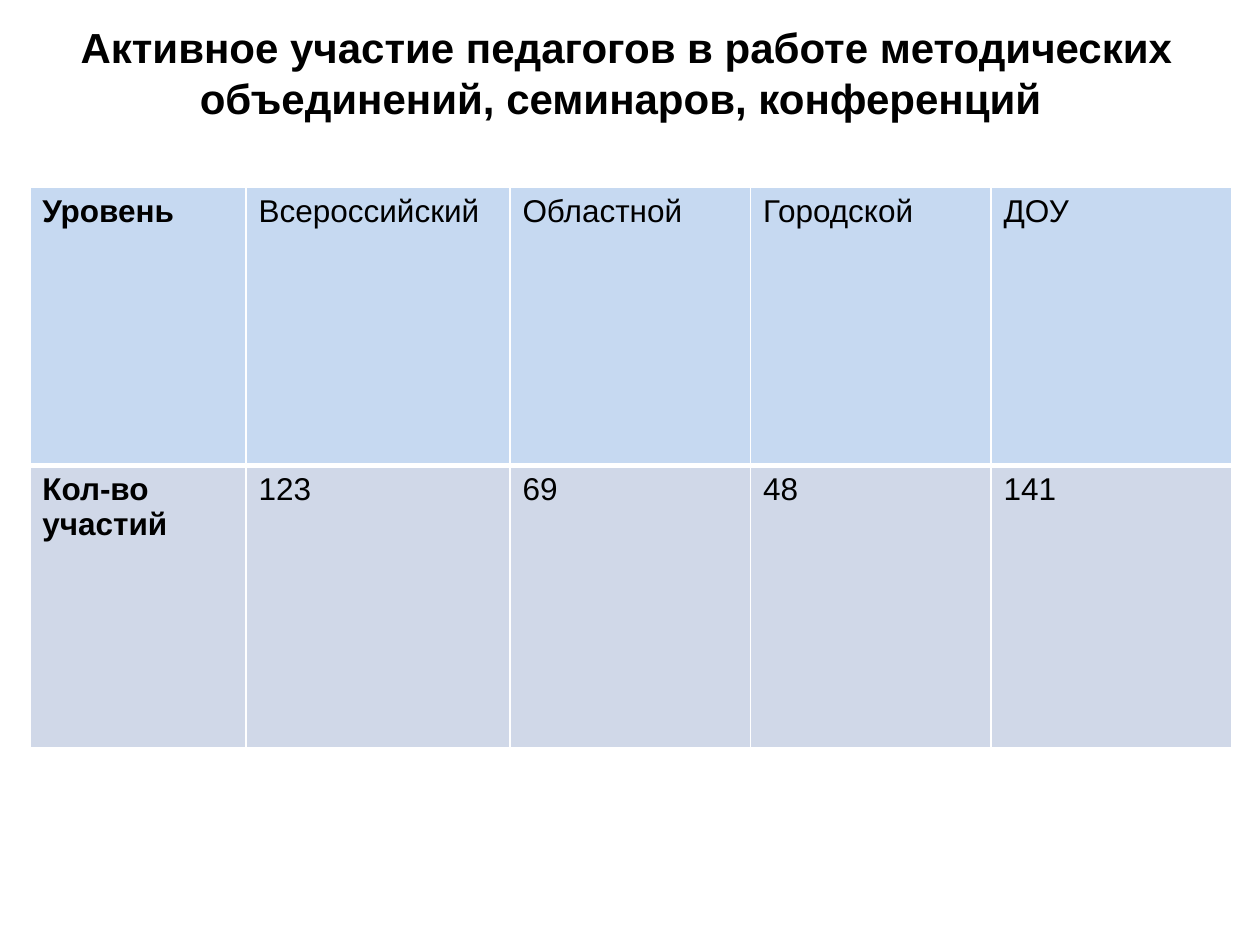
from lxml.etree import SubElement
from pptx import Presentation
from pptx.dml.color import RGBColor
from pptx.enum.text import MSO_ANCHOR, PP_ALIGN
from pptx.oxml.ns import qn
from pptx.util import Cm, Pt

BLACK = RGBColor(0x00, 0x00, 0x00)
WHITE = RGBColor(0xFF, 0xFF, 0xFF)
HEADER_BLUE = RGBColor(0xC6, 0xD9, 0xF1)
BODY_BLUE = RGBColor(0xD0, 0xD8, 0xE8)

LEVELS = ["Уровень", "Всероссийский", "Областной", "Городской", "ДОУ"]
COUNTS = ["Кол-во участий", "123", "69", "48", "141"]
COLUMN_WIDTHS = [4.36, 5.32, 4.85, 4.85, 4.85]
ROW_HEIGHTS = [5.6, 5.69]


def add_run(paragraph, text, size, bold):
    run = paragraph.add_run()
    run.text = text
    run.font.name = "Arial"
    run.font.size = Pt(size)
    run.font.bold = bold
    run.font.color.rgb = BLACK


def set_borders(cell, widths):
    """Draw solid white borders; widths maps side tags (lnL, ...) to points."""
    properties = cell._tc.get_or_add_tcPr()
    for position, (side, width) in enumerate(widths.items()):
        line = SubElement(properties, qn(f"a:{side}"), w=str(Pt(width)))
        fill = SubElement(line, qn("a:solidFill"))
        SubElement(fill, qn("a:srgbClr"), val=str(WHITE))
        properties.insert(position, line)


prs = Presentation()
prs.slide_width = Cm(25.4)
prs.slide_height = Cm(19.05)
slide = prs.slides.add_slide(prs.slide_layouts[6])

# Heading
heading = slide.shapes.add_textbox(Cm(1.2), Cm(0.3), Cm(22.86), Cm(2.3)).text_frame
heading.word_wrap = True
heading.vertical_anchor = MSO_ANCHOR.MIDDLE
heading.margin_left = heading.margin_right = 0
heading_line = heading.paragraphs[0]
heading_line.alignment = PP_ALIGN.CENTER
heading_line.line_spacing = Pt(29)
add_run(
    heading_line,
    "Активное участие педагогов в работе методических "
    "объединений, семинаров, конференций ",
    24,
    True,
)

# Participation by level
participation = slide.shapes.add_table(
    len(ROW_HEIGHTS), len(COLUMN_WIDTHS),
    Cm(0.6), Cm(3.78), Cm(sum(COLUMN_WIDTHS)), Cm(sum(ROW_HEIGHTS)),
).table
for column, width in zip(participation.columns, COLUMN_WIDTHS):
    column.width = Cm(width)
for row, height in zip(participation.rows, ROW_HEIGHTS):
    row.height = Cm(height)

table_rows = [(LEVELS, HEADER_BLUE, 1, 3), (COUNTS, BODY_BLUE, 3, 1)]
for row, (texts, color, top, bottom) in enumerate(table_rows):
    for col, text in enumerate(texts):
        cell = participation.cell(row, col)
        cell.fill.solid()
        cell.fill.fore_color.rgb = color
        set_borders(cell, {"lnL": 1, "lnR": 1, "lnT": top, "lnB": bottom})
        add_run(cell.text_frame.paragraphs[0], text, 18, col == 0)

prs.save("out.pptx")
